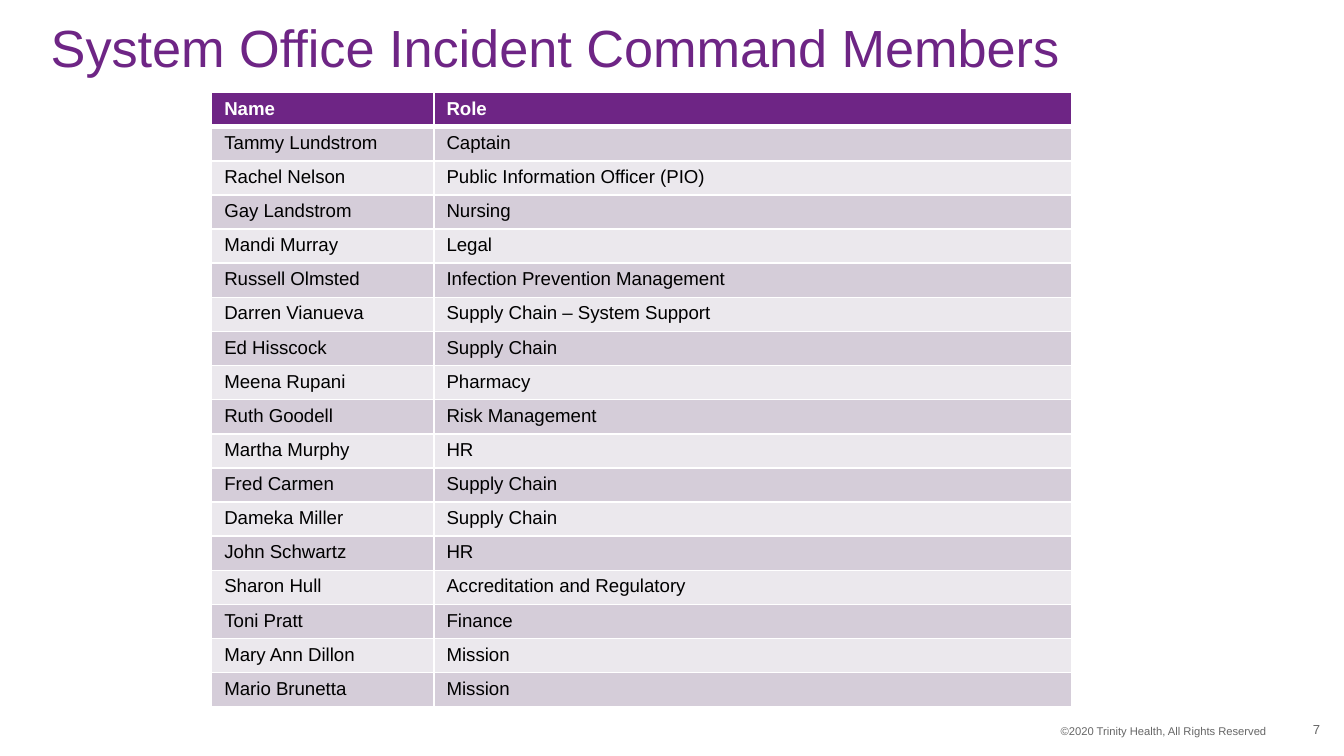
from lxml.etree import SubElement
from pptx import Presentation
from pptx.dml.color import RGBColor
from pptx.enum.text import MSO_ANCHOR, PP_ALIGN
from pptx.oxml.ns import qn
from pptx.util import Cm, Pt

COLOURS = {
    "purple": "6E2585",
    "white": "FFFFFF",
    "black": "000000",
    "grey": "666666",
    "dark band": "D5CDD9",
    "light band": "EBE8ED",
}
FONT = "Arial"
MEMBERS = [
    ("Tammy Lundstrom", "Captain"),
    ("Rachel Nelson", "Public Information Officer (PIO)"),
    ("Gay Landstrom", "Nursing"),
    ("Mandi Murray", "Legal"),
    ("Russell Olmsted", "Infection Prevention Management"),
    ("Darren Vianueva", "Supply Chain – System Support"),
    ("Ed Hisscock", "Supply Chain"),
    ("Meena Rupani", "Pharmacy"),
    ("Ruth Goodell", "Risk Management"),
    ("Martha Murphy", "HR"),
    ("Fred Carmen", "Supply Chain"),
    ("Dameka Miller", "Supply Chain"),
    ("John Schwartz", "HR"),
    ("Sharon Hull", "Accreditation and Regulatory"),
    ("Toni Pratt", "Finance"),
    ("Mary Ann Dillon", "Mission"),
    ("Mario Brunetta", "Mission"),
]


class PageBuilder:
    def __init__(self, page):
        self.page = page

    def span(self, paragraph, text, size, colour, bold=False):
        span = paragraph.add_run()
        span.text = text
        span.font.name = FONT
        span.font.size = Pt(size)
        span.font.bold = bold
        span.font.color.rgb = RGBColor.from_string(COLOURS[colour])

    def text(self, place, text, size, colour, align=PP_ALIGN.LEFT,
             anchor=MSO_ANCHOR.TOP, insets=(0.25, 0.13, 0.25, 0.13), spacing=None):
        """Add a one-paragraph box; place and insets are in cm, insets from left clockwise."""
        box = self.page.shapes.add_textbox(*map(Cm, place))
        frame = box.text_frame
        frame.word_wrap = True
        frame.vertical_anchor = anchor
        frame.margin_left, frame.margin_top, frame.margin_right, frame.margin_bottom = map(Cm, insets)
        paragraph = frame.paragraphs[0]
        paragraph.alignment = align
        paragraph.line_spacing = spacing
        self.span(paragraph, text, size, colour)

    def borders(self, cell, top, bottom):
        """Draw white borders, 1 pt wide at the sides; call before filling the cell."""
        properties = cell._tc.get_or_add_tcPr()
        for side, width in (("L", 1), ("R", 1), ("T", top), ("B", bottom)):
            line = SubElement(properties, qn(f"a:ln{side}"), w=str(Pt(width)))
            fill = SubElement(line, qn("a:solidFill"))
            SubElement(fill, qn("a:srgbClr"), val=COLOURS["white"])

    def table(self, left, top, widths, row_height, rows):
        """Add a table with a purple header row and banded body rows."""
        table = self.page.shapes.add_table(
            len(rows), len(widths), Cm(left), Cm(top),
            Cm(sum(widths)), Cm(row_height * len(rows))).table
        for column, width in zip(table.columns, widths):
            column.width = Cm(width)
        for index, values in enumerate(rows):
            table.rows[index].height = Cm(row_height)
            header = index == 0
            band = "purple" if header else "dark band" if index % 2 else "light band"
            for cell, value in zip(table.rows[index].cells, values):
                cell.margin_left = cell.margin_right = Cm(0.24)
                cell.margin_top = cell.margin_bottom = Cm(0.11)
                self.borders(cell, top=3 if index == 1 else 1, bottom=3 if header else 1)
                cell.fill.solid()
                cell.fill.fore_color.rgb = RGBColor.from_string(COLOURS[band])
                self.span(cell.text_frame.paragraphs[0], value, 10,
                          "white" if header else "black", bold=header)


def main():
    deck = Presentation()
    deck.slide_width, deck.slide_height = Cm(25.4), Cm(14.29)
    builder = PageBuilder(deck.slides.add_slide(deck.slide_layouts[6]))
    builder.text((0.96, 0.26, 22.86, 1.4), "System Office Incident Command Members",
                 28, "purple", anchor=MSO_ANCHOR.MIDDLE, insets=(0, 0, 0, 0), spacing=0.9)
    builder.text((13.54, 13.56, 10.64, 0.5), "©2020 Trinity Health, All Rights Reserved",
                 6, "grey", align=PP_ALIGN.RIGHT)
    builder.text((23.83, 13.41, 1.12, 0.76), "7", 7, "grey", align=PP_ALIGN.RIGHT,
                 anchor=MSO_ANCHOR.MIDDLE, insets=(0.25, 0.13, 0, 0.13))
    builder.table(4, 1.75, (4.2, 12.06), 0.64, [("Name", "Role"), *MEMBERS])
    deck.save("out.pptx")


if __name__ == "__main__":
    main()
